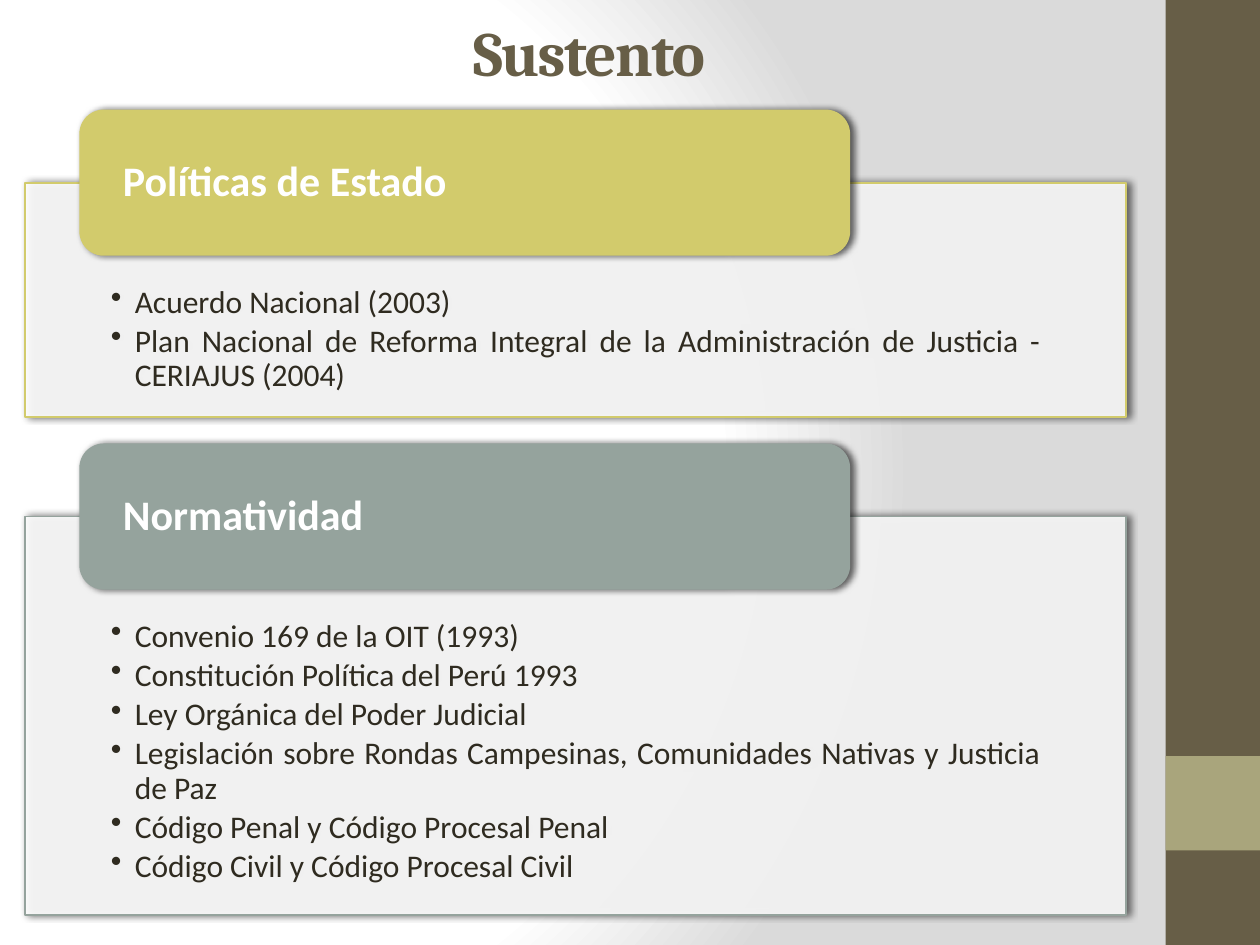
from pptx import Presentation
from pptx import util as u
from pptx.dml.color import RGBColor
from pptx.enum import shapes, text
from pptx.oxml import parse_xml
from pptx.oxml.ns import nsdecls, qn

BROWN = RGBColor(0x67, 0x5E, 0x47)
TAN = RGBColor(0xA9, 0xA5, 0x7C)
YELLOW = RGBColor(0xD2, 0xCB, 0x6C)
SAGE = RGBColor(0x95, 0xA3, 0x9D)
WHITE = RGBColor(0xFF, 0xFF, 0xFF)
GREY = RGBColor(0xDA, 0xDA, 0xDA)
INK = RGBColor(0x2F, 0x2B, 0x20)

SECTIONS = [
    (1.45, 1.86, YELLOW, "Políticas de Estado", [
        "Acuerdo Nacional (2003)",
        "Plan Nacional de Reforma Integral de la Administración de Justicia - CERIAJUS (2004)",
    ]),
    (4.1, 3.16, SAGE, "Normatividad", [
        "Convenio 169 de la OIT (1993)",
        "Constitución Política del Perú 1993",
        "Ley Orgánica del Poder Judicial",
        "Legislación sobre Rondas Campesinas, Comunidades Nativas y Justicia de Paz",
        "Código Penal y Código Procesal Penal",
        "Código Civil y Código Procesal Civil",
    ]),
]


def add_background(s):
    stops = "".join(
        f'<a:gs pos="{pos}000"><a:srgbClr val="{color}"/></a:gs>'
        for pos, color in ((0, WHITE), (75, WHITE), (100, GREY)))
    s._element.cSld.insert(0, parse_xml(
        f'<p:bg {nsdecls("p", "a")}><p:bgPr><a:gradFill rotWithShape="1">'
        f'<a:gsLst>{stops}</a:gsLst><a:path path="circle">'
        '<a:fillToRect l="20000" t="50000" r="100000" b="50000"/></a:path>'
        '</a:gradFill><a:effectLst/></p:bgPr></p:bg>'))


def add_box(s, kind, left, top, width, height, fill):
    sp = s.shapes.add_shape(kind, *map(u.Inches, (left, top, width, height)))
    sp.fill.solid()
    sp.fill.fore_color.rgb = fill
    sp.line.fill.background()
    sp.shadow.inherit = False
    return sp


def add_shadow(sp):
    sp._element.spPr.find(qn("a:effectLst")).append(parse_xml(
        f'<a:outerShdw {nsdecls("a")} blurRad="{u.Pt(4)}" dist="{u.Pt(2)}" dir="0" '
        'rotWithShape="0"><a:srgbClr val="000000"><a:alpha val="60000"/>'
        '</a:srgbClr></a:outerShdw>'))


def set_frame(tf, anchor, left, top, right, bottom):
    tf.word_wrap = True
    tf.vertical_anchor = anchor
    tf.margin_left, tf.margin_top = u.Inches(left), u.Inches(top)
    tf.margin_right, tf.margin_bottom = u.Inches(right), u.Inches(bottom)


def format_paragraph(p, name, size, color, bold, align):
    p.font.name = name
    p.font.size = u.Pt(size)
    p.font.color.rgb = color
    p.font.bold = bold
    p.alignment = align


def add_bullet(p):
    pPr = p._p.get_or_add_pPr()
    pPr.set("marL", str(u.Inches(0.19)))
    pPr.set("indent", str(u.Inches(-0.19)))
    bullet = parse_xml(f'<a:buChar {nsdecls("a")} char="•"/>')
    pPr.insert_element_before(bullet, "a:tabLst", "a:defRPr", "a:extLst")


def add_sidebar(s, left, top, width, height):
    add_box(s, shapes.MSO_SHAPE.RECTANGLE, left, top, width, height, BROWN)
    add_box(s, shapes.MSO_SHAPE.RECTANGLE, left, top + 6, width, width, TAN)


def add_title(s, left, top, width, height):
    sp = s.shapes.title
    sp.left, sp.top = u.Inches(left), u.Inches(top)
    sp.width, sp.height = u.Inches(width), u.Inches(height)
    tf = sp.text_frame
    tf.text = "Sustento"
    tf.vertical_anchor = text.MSO_ANCHOR.MIDDLE
    p = tf.paragraphs[0]
    format_paragraph(p, "Cambria", 36, BROWN, True, text.PP_ALIGN.CENTER)
    p.runs[0].font._element.set("spc", "-100")


def add_section(s, left, top, width, height, color, heading, items):
    panel = add_box(s, shapes.MSO_SHAPE.RECTANGLE, left, top, width, height, WHITE)
    panel.line.color.rgb = color
    panel.line.width = u.Pt(1)
    white = panel._element.spPr.find(qn("a:solidFill"))[0]
    white.append(parse_xml(f'<a:alpha {nsdecls("a")} val="90000"/>'))
    add_shadow(panel)
    tf = panel.text_frame
    set_frame(tf, text.MSO_ANCHOR.TOP, 0.68, 0.82, 0.68, 0.14)
    tf.text = "\n".join(items)
    for p in tf.paragraphs:
        format_paragraph(p, "Calibri", 18, INK, False, text.PP_ALIGN.JUSTIFY)
        p.level = 1
        p.line_spacing = 0.9
        p.space_after = u.Pt(3)
        add_bullet(p)

    tab = add_box(s, shapes.MSO_SHAPE.ROUNDED_RECTANGLE,
                  left + 0.43, top - 0.58, width * 0.7, 1.16, color)
    add_shadow(tab)
    tf = tab.text_frame
    set_frame(tf, text.MSO_ANCHOR.MIDDLE, 0.29, 0, 0.29, 0)
    tf.text = heading
    p = tf.paragraphs[0]
    format_paragraph(p, "Calibri", 24, WHITE, True, text.PP_ALIGN.LEFT)
    p.line_spacing = 0.9


def main():
    prs = Presentation()
    prs.slide_width, prs.slide_height = u.Inches(10), u.Inches(7.5)
    s = prs.slides.add_slide(prs.slide_layouts[5])
    add_background(s)
    add_sidebar(s, 9.25, 0, 0.75, 7.5)
    add_title(s, 0.51, 0, 8.33, 0.81)
    for top, height, color, heading, items in SECTIONS:
        add_section(s, 0.2, top, 8.74, height, color, heading, items)
    prs.save("out.pptx")


if __name__ == "__main__":
    main()
